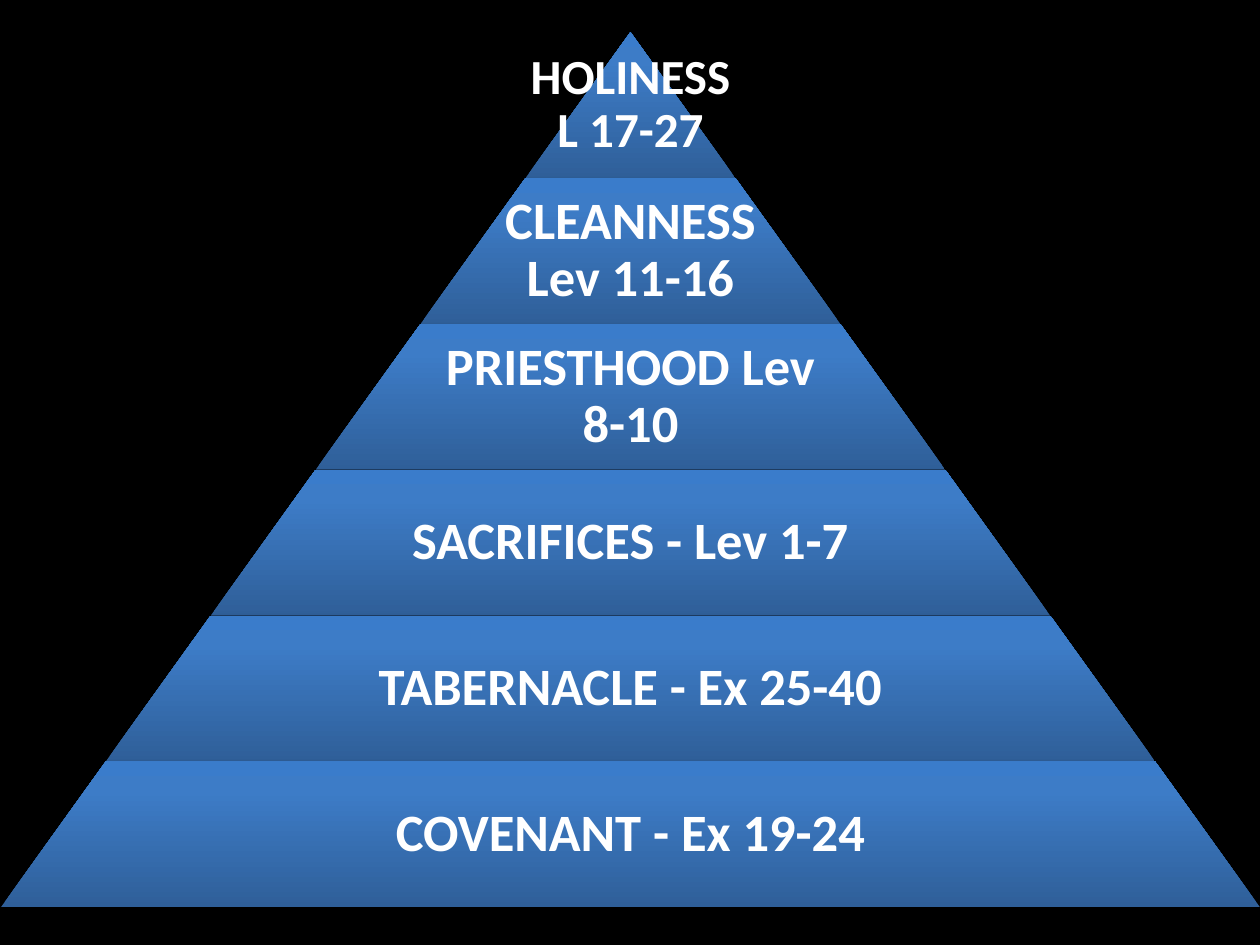
from copy import deepcopy
from dataclasses import dataclass

from lxml import etree
from pptx import Presentation
from pptx.dml.color import RGBColor
from pptx.enum.shapes import MSO_SHAPE
from pptx.enum.text import MSO_ANCHOR, PP_ALIGN
from pptx.oxml import parse_xml
from pptx.util import Cm, Pt

TRAPEZOID = MSO_SHAPE.TRAPEZOID
MIDDLE = MSO_ANCHOR.MIDDLE
CENTER = PP_ALIGN.CENTER
NS = "http://schemas.openxmlformats.org/drawingml/2006/main"


@dataclass(frozen=True)
class Theme:
    background: str = "000000"
    text: str = "FFFFFF"
    stops: tuple = ((0, "2F5F99"), (0.8, "3D7CC7"), (1, "3A7CCB"))
    font: str = "Calibri"
    top_size: int = 28
    size: int = 30


THEME = Theme()
LEVELS = [
    "HOLINESS L 17-27",
    "CLEANNESS Lev 11-16",
    "PRIESTHOOD Lev 8-10",
    "SACRIFICES - Lev 1-7",
    "TABERNACLE - Ex 25-40",
    "COVENANT - Ex 19-24",
]
FIRST_LINE_INDENTS = {2: Cm(-0.71)}
TEXT_SHARE = 0.65


def set_attrs(obj, values):
    for name, value in values.items():
        setattr(obj, name, value)


def fill_gradient(fill):
    fill.gradient()
    fill.gradient_angle = 90
    stop_list = fill.gradient_stops[0]._gs.getparent()
    stop_list.append(deepcopy(stop_list[-1]))
    for stop, (position, color) in zip(fill.gradient_stops, THEME.stops):
        stop.position = position
        stop.color.rgb = RGBColor.from_string(color)


def add_shadow(shape):
    shape.shadow.inherit = False
    effects = shape._element.spPr.find(f"{{{NS}}}effectLst")
    effects.append(parse_xml(
        f'<a:outerShdw xmlns:a="{NS}" blurRad="40000" dist="23000" '
        'dir="5400000" rotWithShape="0"><a:srgbClr val="000000">'
        '<a:alpha val="35000"/></a:srgbClr></a:outerShdw>'))


def add_band(s, left, top, width, height, slope):
    sp = s.shapes.add_shape(TRAPEZOID, left, top, width, height)
    sp.adjustments[0] = slope
    fill_gradient(sp.fill)
    sp.line.fill.background()
    add_shadow(sp)


def add_label(s, left, top, width, height, text, size, indent):
    tf = s.shapes.add_textbox(left, top, width, height).text_frame
    margins = dict.fromkeys(
        ("margin_left", "margin_top", "margin_right", "margin_bottom"), Cm(0.1))
    set_attrs(tf, {"word_wrap": True, "vertical_anchor": MIDDLE, **margins})
    p = tf.paragraphs[0]
    set_attrs(p, {"alignment": CENTER, "line_spacing": 0.9})
    if indent:
        set_attrs_xml = {"marL": "0", "indent": str(int(indent))}
        p._p.get_or_add_pPr().attrib.update(set_attrs_xml)
    r = p.add_run()
    r.text = text
    set_attrs(r.font, {"name": THEME.font, "size": Pt(size), "bold": True})
    r.font.color.rgb = RGBColor.from_string(THEME.text)


def add_pyramid(s, left, top, width, height, levels):
    step = width / len(levels)
    band_height = int(height / len(levels))
    slope = step / 2 / band_height
    for i, text in enumerate(levels):
        band_width = int(step * (i + 1))
        label_width = int(band_width * TEXT_SHARE) if i else band_width
        y = top + i * band_height
        add_band(s, left + (width - band_width) // 2, y,
                 band_width, band_height, slope)
        add_label(s, left + (width - label_width) // 2, y,
                  label_width, band_height, text,
                  THEME.size if i else THEME.top_size,
                  FIRST_LINE_INDENTS.get(i))


def main():
    prs = Presentation()
    set_attrs(prs, {"slide_width": Cm(25.4), "slide_height": Cm(19.05)})
    s = prs.slides.add_slide(prs.slide_layouts[6])
    s.background.fill.solid()
    s.background.fill.fore_color.rgb = RGBColor.from_string(THEME.background)
    add_pyramid(s, Cm(0.02), Cm(0.65), Cm(25.38), Cm(17.64), LEVELS)
    prs.save("out.pptx")


if __name__ == "__main__":
    main()
